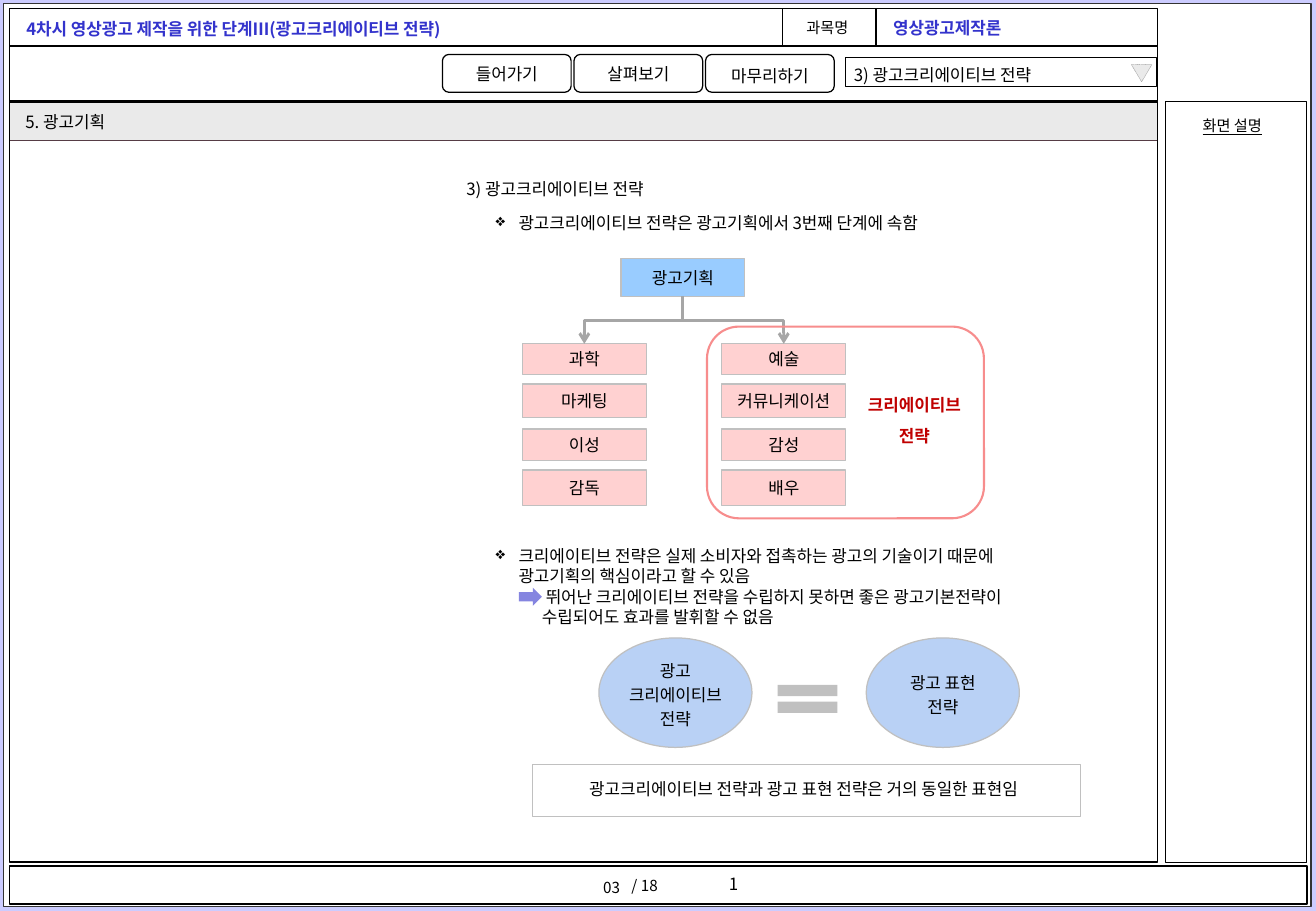
"""Build the storyboard slide on the creative strategy step of advertising planning."""
from lxml.etree import SubElement
from pptx import Presentation
from pptx.dml.color import RGBColor
from pptx.enum.dml import MSO_LINE
from pptx.enum.shapes import MSO_CONNECTOR, MSO_SHAPE
from pptx.enum.text import MSO_ANCHOR, MSO_AUTO_SIZE, PP_ALIGN
from pptx.oxml.ns import qn
from pptx.util import Cm, Pt

FONT = "Noto Sans CJK KR"
BLACK = RGBColor(0x00, 0x00, 0x00)
WHITE = RGBColor(0xFF, 0xFF, 0xFF)
LAVENDER = RGBColor(0xCC, 0xCC, 0xFF)
CHARCOAL = RGBColor(0x33, 0x33, 0x33)
PALE_GRAY = RGBColor(0xEA, 0xEA, 0xEA)
BROWN = RGBColor(0x56, 0x3C, 0x45)
MID_GRAY = RGBColor(0x96, 0x96, 0x96)
ARROW_GRAY = RGBColor(0xA6, 0xA6, 0xA6)
SILVER = RGBColor(0xC0, 0xC0, 0xC0)
INDIGO = RGBColor(0x33, 0x33, 0xCC)
VIOLET = RGBColor(0x85, 0x85, 0xE0)
SKY = RGBColor(0x99, 0xCC, 0xFF)
PALE_BLUE = RGBColor(0xB9, 0xD1, 0xF5)
PINK = RGBColor(0xFF, 0xD1, 0xD1)
CORAL = RGBColor(0xF7, 0x8D, 0x8D)
RED = RGBColor(0xC0, 0x00, 0x00)

SLIDE_SIZE = (27.51, 19.05)
TITLE = ("5. 광고기획", (0.28, 2.13, 13.49, 0.79))
FRAMES = [
    ((0, 0, *SLIDE_SIZE), LAVENDER, None, 0),
    ((0.08, 0.08, 27.33, 18.87), WHITE, CHARCOAL, 0.75),
    ((0.2, 2.13, 24, 0.81), PALE_GRAY, BROWN, 0.25),
    ((0.2, 18.11, 27.13, 0.79), None, BLACK, 1),
    ((0.2, 2.13, 24, 15.9), None, BLACK, 1),
    ((24.36, 2.13, 2.95, 15.9), None, BLACK, 0.75),
    ((0.2, 0.18, 24, 0.79), None, BLACK, 1),
    ((16.36, 0.18, 1.96, 0.79), None, BLACK, 1),
    ((0.2, 0.97, 24, 1.14), None, BLACK, 1),
    ((17.68, 1.19, 6.5, 0.61), WHITE, BLACK, 0.25),
    ((11.13, 15.98, 11.46, 1.09), WHITE, SILVER, 0.75),
]
HEADING = "3) 광고크리에이티브 전략"
BULLET = {"bullet": "❖", "margin": 0.48, "indent": -0.48}
LABELS = [
    ("화면 설명", (24.89, 2.31, 1.88, 0.64), {"size": 9, "underline": True, "wrap": False}),
    ("4차시 영상광고 제작을 위한 단계Ⅲ(광고크리에이티브 전략)", (0.3, 0.25, 13.13, 0.69),
     {"color": INDIGO, "bold": True}),
    ("1", (14.99, 18.14, 1.04, 0.69), {"wrap": False}),
    ("/ 18", (12.88, 18.19, 1.12, 0.64), {"size": 9, "align": PP_ALIGN.RIGHT, "wrap": False}),
    ("03", (12.29, 18.16, 0.99, 0.71), {"size": 9, "align": PP_ALIGN.CENTER, "spacing": 1.2}),
    ("영상광고제작론", (18.42, 0.15, 5.74, 0.71),
     {"color": INDIGO, "bold": True, "spacing": 1.2}),
    ("과목명", (16.61, 0.25, 1.47, 0.64), {"size": 9, "wrap": False}),
    (HEADING, (17.6, 1.14, 5.94, 0.79), {"spacing": 1.2}),
    (HEADING, (9.5, 3.53, 4.39, 0.76), {"spacing": 1.2, "wrap": False}),
    ("광고크리에이티브 전략은 광고기획에서 3번째 단계에 속함", (10.11, 4.32, 9.7, 0.69),
     {"wrap": False, **BULLET}),
    ("광고크리에이티브 전략과 광고 표현 전략은 거의 동일한 표현임",
     (11.18, 16.15, 11.23, 0.69), {"align": PP_ALIGN.CENTER}),
    ("크리에이티브\n전략", (17.86, 8.13, 2.51, 1.32),
     {"color": RED, "bold": True, "align": PP_ALIGN.CENTER, "gap": 6, "wrap": False}),
]
EXPLANATION_BOX = (10.11, 11.28, 11.53, 1.96)
EXPLANATION = "크리에이티브 전략은 실제 소비자와 접촉하는 광고의 기술이기 때문에\v광고기획의 핵심이라고 할 수 있음"
CONSEQUENCE = "뛰어난 크리에이티브 전략을 수립하지 못하면 좋은 광고기본전략이\v수립되어도 효과를 발휘할 수 없음"
BUTTONS = [("들어가기", 1), ("살펴보기", 1), ("마무리하기", 1.2)]
BUTTON_LEFT, BUTTON_STEP = 9.25, 2.75
NODE_WIDTH = 2.59
ROOT = ("광고기획", (12.98, 5.41, NODE_WIDTH, 0.79))
COLUMNS = [(10.92, ["과학", "마케팅", "이성", "감독"]),
           (15.09, ["예술", "커뮤니케이션", "감성", "배우"])]
ROWS = [(7.19, 0.64), (8.03, 0.71), (8.97, 0.66), (9.83, 0.74)]
ELLIPSES = [("광고\n크리에이티브 전략", 12.52), ("광고 표현\n전략", 18.11)]


def style_paragraph(paragraph, size=10, color=BLACK, bold=False, underline=False,
                    align=PP_ALIGN.LEFT, spacing=1, bullet=None, margin=0, indent=0):
    properties = paragraph._p.get_or_add_pPr()
    if bullet:
        SubElement(properties, qn("a:buChar")).set("char", bullet)
    properties.set("marL", str(Cm(margin)))
    properties.set("indent", str(Cm(indent)))
    paragraph.alignment = align
    paragraph.line_spacing = spacing
    for run in paragraph.runs:
        run.font.size = Pt(size)
        run.font.color.rgb = color
        run.font.bold = bold
        run.font.underline = underline
        run.font.name = FONT
        SubElement(run.font._element, qn("a:ea")).set("typeface", FONT)


def write_text(shape, text, wrap=True, grow=False, anchor=MSO_ANCHOR.TOP,
               side_inset=0.25, gap=0, **text_format):
    frame = shape.text_frame
    frame.text = text
    frame.word_wrap = wrap
    frame.auto_size = MSO_AUTO_SIZE.SHAPE_TO_FIT_TEXT if grow else MSO_AUTO_SIZE.NONE
    frame.vertical_anchor = anchor
    frame.margin_left = frame.margin_right = Cm(side_inset)
    frame.margin_top = frame.margin_bottom = Cm(0.13)
    for number, paragraph in enumerate(frame.paragraphs):
        paragraph.space_before = Pt(gap if number else 0)
        style_paragraph(paragraph, **text_format)
    return frame


def add_box(slide, kind, box, fill=None, line=None, width=0.75):
    shape = slide.shapes.add_shape(kind, *map(Cm, box))
    shape.shadow.inherit = False
    if fill is None:
        shape.fill.background()
    else:
        shape.fill.solid()
        shape.fill.fore_color.rgb = fill
    if line is None:
        shape.line.fill.background()
    else:
        shape.line.color.rgb = line
        shape.line.width = Pt(width)
    return shape


def add_node(slide, kind, text, box, fill, line=SILVER, **text_format):
    shape = add_box(slide, kind, box, fill, line)
    settings = {"anchor": MSO_ANCHOR.MIDDLE, "align": PP_ALIGN.CENTER, "side_inset": 0.05}
    write_text(shape, text, **{**settings, **text_format})


def add_branch(slide, start_x, start_y, end_x, end_y):
    drop, span = end_y - start_y, abs(end_x - start_x)
    center_x, center_y = (start_x + end_x) / 2, (start_y + end_y) / 2
    goes_right = end_x > start_x
    half = -drop / 2 if goes_right else drop / 2
    connector = slide.shapes.add_connector(
        MSO_CONNECTOR.ELBOW, Cm(center_x - half), Cm(center_y - span / 2),
        Cm(center_x + half), Cm(center_y + span / 2))
    connector.line.color.rgb = ARROW_GRAY
    connector.line.width = Pt(1.75)
    properties = connector._element.spPr
    properties.find(qn("a:xfrm")).set("rot", str((270 if goes_right else 90) * 60000))
    SubElement(connector.line._get_or_add_ln(), qn("a:tailEnd")).set("type", "arrow")
    SubElement(properties, qn("a:effectLst"))


def add_label(slide, text, box, **text_format):
    label = slide.shapes.add_textbox(*map(Cm, box))
    return write_text(label, text, grow=True, **text_format)


def main():
    presentation = Presentation()
    presentation.slide_width, presentation.slide_height = map(Cm, SLIDE_SIZE)
    slide = presentation.slides.add_slide(presentation.slide_layouts[5])

    for box, fill, line, width in FRAMES:
        add_box(slide, MSO_SHAPE.RECTANGLE, box, fill, line, width)
    marker = add_box(slide, MSO_SHAPE.ISOSCELES_TRIANGLE, (23.65, 1.35, 0.43, 0.36),
                     PALE_GRAY, MID_GRAY, 0.25)
    marker.rotation = 180
    marker.line.dash_style = MSO_LINE.ROUND_DOT
    for index, (text, spacing) in enumerate(BUTTONS):
        box = (BUTTON_LEFT + index * BUTTON_STEP, 1.14, 2.69, 0.79)
        add_node(slide, MSO_SHAPE.ROUNDED_RECTANGLE, text, box, WHITE, BLACK,
                 spacing=spacing, wrap=False, side_inset=0.25)

    title = slide.shapes.title
    text, box = TITLE
    title.left, title.top, title.width, title.height = map(Cm, box)
    write_text(title, text, grow=True, spacing=1.2)
    slide.shapes._spTree.append(title._element)

    for text, box, text_format in LABELS:
        add_label(slide, text, box, **text_format)
    explanation = add_label(slide, EXPLANATION, EXPLANATION_BOX, wrap=False, **BULLET)
    consequence = explanation.add_paragraph()
    consequence.text = CONSEQUENCE
    style_paragraph(consequence, margin=0.97, indent=0.08)
    add_box(slide, MSO_SHAPE.RIGHT_ARROW, (10.85, 12.29, 0.48, 0.38), VIOLET)

    text, root_box = ROOT
    add_node(slide, MSO_SHAPE.RECTANGLE, text, root_box, SKY)
    root_left, root_top, root_width, root_height = root_box
    for left, names in COLUMNS:
        for name, (top, height) in zip(names, ROWS):
            add_node(slide, MSO_SHAPE.RECTANGLE, name, (left, top, NODE_WIDTH, height), PINK)
        add_branch(slide, root_left + root_width / 2, root_top + root_height,
                   left + NODE_WIDTH / 2, ROWS[0][0])
    add_box(slide, MSO_SHAPE.ROUNDED_RECTANGLE, (14.78, 6.83, 5.79, 4.01), None, CORAL, 1.25)

    for text, left in ELLIPSES:
        add_node(slide, MSO_SHAPE.OVAL, text, (left, 13.34, 3.2, 2.29), PALE_BLUE, spacing=1.2)
    add_box(slide, MSO_SHAPE.MATH_EQUAL, (16.03, 14.12, 1.7, 0.99), SILVER)
    presentation.save("out.pptx")


if __name__ == "__main__":
    main()
